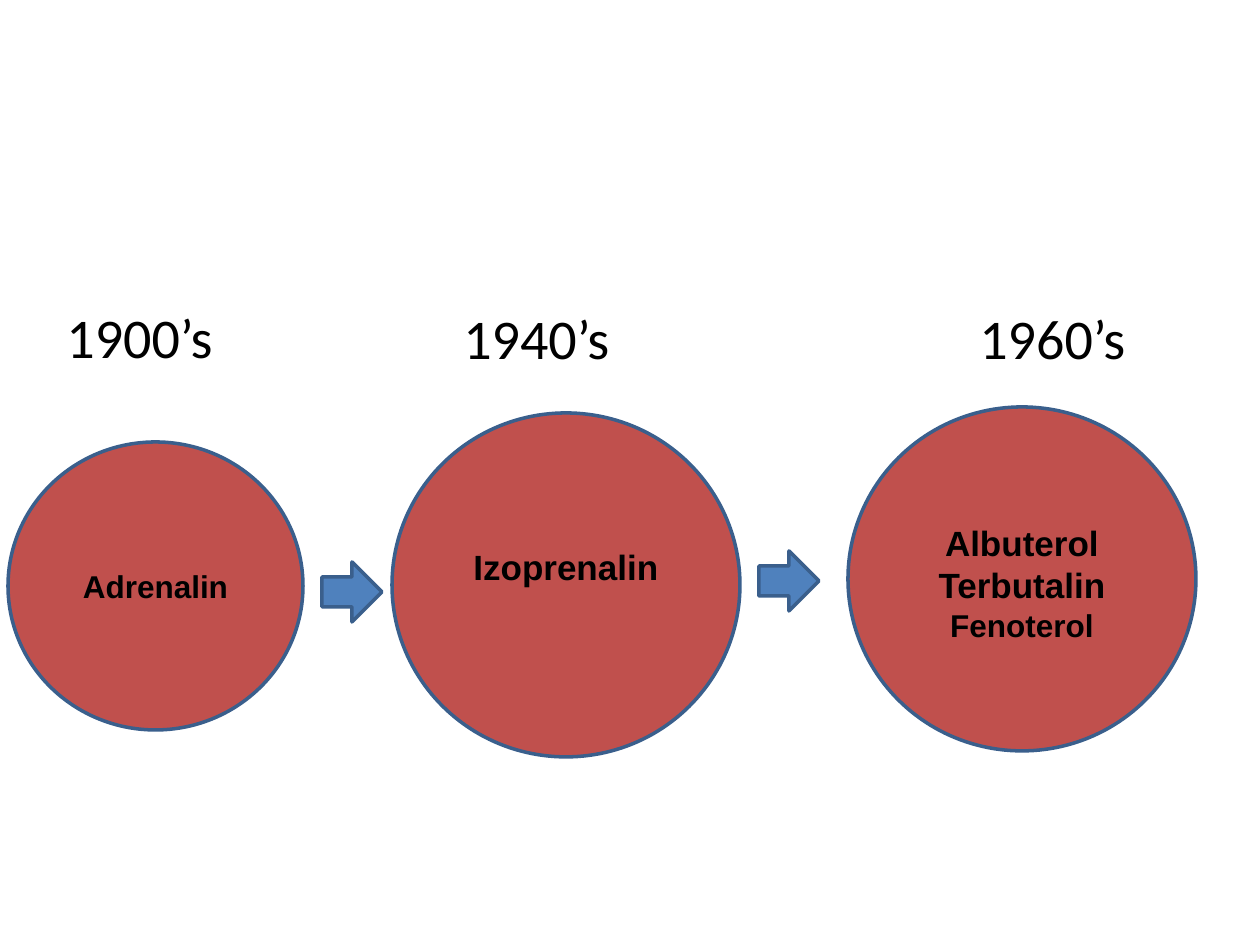
"""Build a slide showing bronchodilator drugs by decade as circles joined by arrows."""
import pptx
import pptx.dml.color
import pptx.enum.shapes
import pptx.enum.text
import pptx.util

PX = 914400 // 126
COLORS = {"circle": "C0504D", "arrow": "4F81BD", "outline": "3A5F8C", "text": "000000"}
SHAPES = pptx.enum.shapes.MSO_SHAPE


def add_outlined_shape(kind, left, top, width, height, color):
    shape = slide.shapes.add_shape(kind, left * PX, top * PX, width * PX, height * PX)
    shape.shadow.inherit = False
    shape.fill.solid()
    shape.fill.fore_color.rgb = pptx.dml.color.RGBColor.from_string(COLORS[color])
    shape.line.color.rgb = pptx.dml.color.RGBColor.from_string(COLORS["outline"])
    shape.line.width = pptx.util.Pt(2)
    return shape


def format_text(paragraph, font_name, size, bold):
    for run in paragraph.runs:
        run.font.name = font_name
        run.font.size = pptx.util.Pt(size)
        run.font.bold = bold
        run.font.color.rgb = pptx.dml.color.RGBColor.from_string(COLORS["text"])


presentation = pptx.Presentation()
presentation.slide_width = 1260 * PX
presentation.slide_height = 945 * PX
slide = presentation.slides.add_slide(presentation.slide_layouts[6])

decades = [("1900’s", 54, 292), ("1940’s", 451, 293), ("1960’s", 967, 293)]
for decade, left, top in decades:
    label = slide.shapes.add_textbox(left * PX, top * PX, 218 * PX, 80 * PX)
    label.text_frame.word_wrap = True
    label.text_frame.margin_top = 10 * PX
    label.text_frame.text = decade
    format_text(label.text_frame.paragraphs[0], "Calibri", 32, False)

circles = [
    (8, 442, 295, 288, 6, 6, [("Adrenalin", 18)]),
    (392, 413, 348, 344, 6, 42, [("Izoprenalin", 20)]),
    (848, 407, 348, 344, 14, 6, [("Albuterol", 20), ("Terbutalin", 20), ("Fenoterol", 18)]),
]
for left, top, width, height, margin_top, margin_bottom, drugs in circles:
    circle = add_outlined_shape(SHAPES.OVAL, left, top, width, height, "circle")
    text_frame = circle.text_frame
    text_frame.vertical_anchor = pptx.enum.text.MSO_ANCHOR.MIDDLE
    text_frame.margin_top = margin_top * PX
    text_frame.margin_bottom = margin_bottom * PX
    text_frame.text = "\n".join(name for name, size in drugs)
    for paragraph, (name, size) in zip(text_frame.paragraphs, drugs):
        paragraph.alignment = pptx.enum.text.PP_ALIGN.CENTER
        format_text(paragraph, "Arial", size, True)

for left, top in [(322, 562), (759, 551)]:
    add_outlined_shape(SHAPES.RIGHT_ARROW, left, top, 60, 60, "arrow")

presentation.save("out.pptx")
